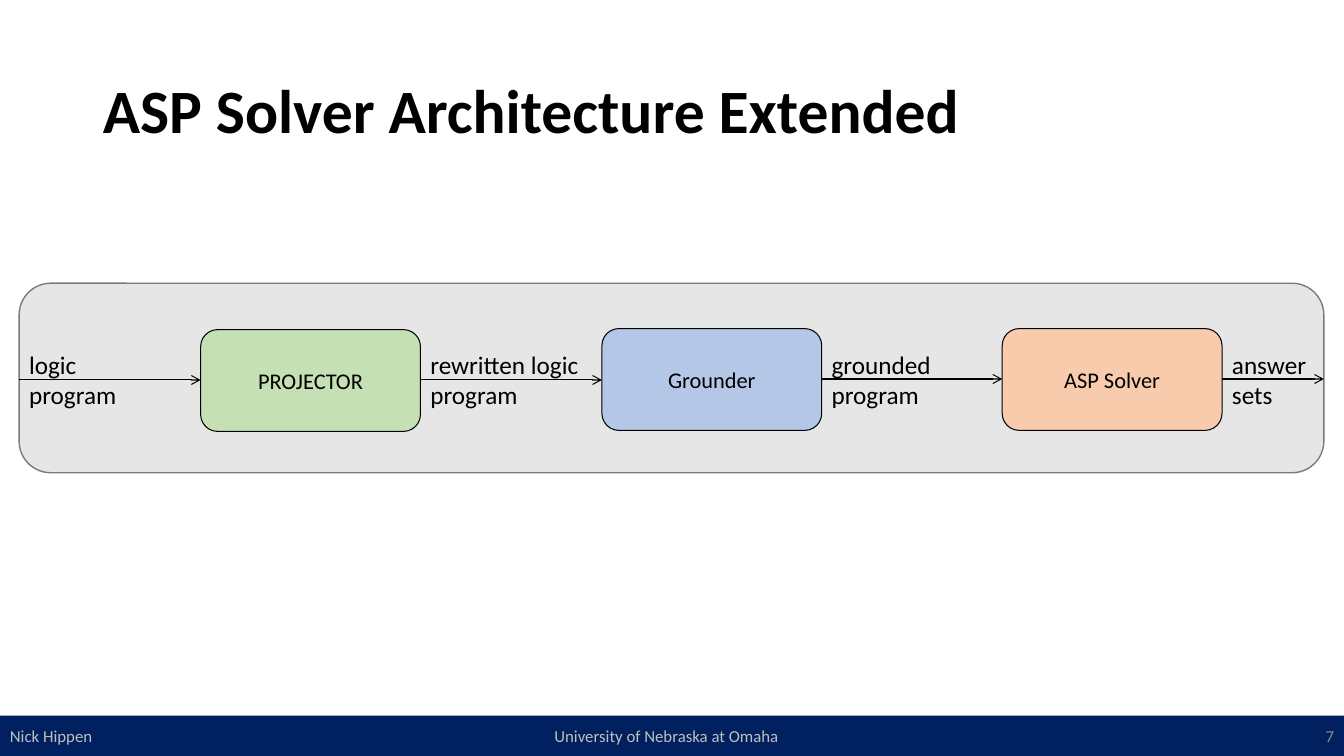
from lxml.etree import SubElement
from pptx import Presentation
from pptx.dml.color import RGBColor
from pptx.enum.shapes import MSO_CONNECTOR, MSO_SHAPE
from pptx.enum.text import MSO_ANCHOR, PP_ALIGN
from pptx.oxml.ns import qn
from pptx.util import Inches, Pt

COLORS = {
    "black": "000000", "panel": "E7E6E6", "edge": "7A7A7A",
    "green": "C5E0B4", "blue": "B4C7E7", "orange": "F8CBAD",
    "navy": "002060", "silver": "BFBFBF", "gray": "8C8C8C",
}


def color(name):
    return RGBColor.from_string(COLORS[name])


class Board:
    """Holds the text style and the current slide."""

    def __init__(self, slide, face="Calibri"):
        self.slide = slide
        self.face = face

    def letter(self, frame, text, size, ink="black", align=PP_ALIGN.LEFT,
               bold=False):
        frame.word_wrap = True
        frame.vertical_anchor = MSO_ANCHOR.MIDDLE
        frame.text = text
        for para in frame.paragraphs:
            para.alignment = align
            font = para.font
            font.name, font.size, font.bold = self.face, Pt(size), bold
            font.color.rgb = color(ink)

    def title(self, text, *area):
        shape = self.slide.shapes.title
        shape.left, shape.top, shape.width, shape.height = map(Inches, area)
        self.letter(shape.text_frame, text, 44, bold=True)
        shape.text_frame.paragraphs[0].line_spacing = 0.9

    def box(self, kind, fill, *area, edge=None, width=0.75):
        shape = self.slide.shapes.add_shape(kind, *map(Inches, area))
        shape.shadow.inherit = False
        shape.fill.solid()
        shape.fill.fore_color.rgb = color(fill)
        if edge:
            shape.line.color.rgb = color(edge)
            shape.line.width = Pt(width)
        else:
            shape.line.fill.background()
        return shape

    def label(self, text, *area, size=18, **style):
        shape = self.slide.shapes.add_textbox(*map(Inches, area))
        self.letter(shape.text_frame, text, size, **style)

    def arrow(self, *ends):
        line = self.slide.shapes.add_connector(
            MSO_CONNECTOR.STRAIGHT, *map(Inches, ends))
        line.line.color.rgb = color("black")
        line.line.width = Pt(0.75)
        props = line._element.spPr
        SubElement(props.find(qn("a:ln")), qn("a:tailEnd"), type="arrow")
        SubElement(props, qn("a:effectLst"))

    def footer(self, left, center, tab, page):
        bar = self.box(MSO_SHAPE.RECTANGLE, "navy", 0, 7.1, 13.33, 0.4)
        self.letter(bar.text_frame, f"{left}\t{center}", 12, "silver")
        # A tab stop places the second part of the footer
        props = bar.text_frame.paragraphs[0]._p.get_or_add_pPr()
        tabs = SubElement(props, qn("a:tabLst"))
        SubElement(tabs, qn("a:tab"), pos=str(Inches(tab)), algn="l")
        props.insert(0, tabs)
        self.label(page, 10.33, 7.1, 3, 0.4, size=12, ink="gray",
                   align=PP_ALIGN.RIGHT)


def main():
    deck = Presentation()
    deck.slide_width, deck.slide_height = Inches(13.33), Inches(7.5)
    board = Board(deck.slides.add_slide(deck.slide_layouts[5]))

    # Title, panel and footer
    board.title("ASP Solver Architecture Extended", 0.92, 0.4, 11.5, 1.45)
    start, end = 0.19, 13.13
    board.box(MSO_SHAPE.ROUNDED_RECTANGLE, "panel",
              start, 2.81, end - start, 1.88, edge="edge", width=1)
    board.footer("Nick Hippen", "University of Nebraska at Omaha", 5.4, "7")

    # Stages of the pipeline: name, fill, left, top
    wide, high = 2.18, 1.01
    stages = [
        ("PROJECTOR", "green", 1.99, 3.27),
        ("Grounder", "blue", 5.97, 3.26),
        ("ASP Solver", "orange", 9.94, 3.26),
    ]
    for name, fill, left, top in stages:
        stage = board.box(MSO_SHAPE.ROUNDED_RECTANGLE, fill,
                          left, top, wide, high, edge="black")
        board.letter(stage.text_frame, name, 16, align=PP_ALIGN.CENTER)

    # Arrows and data passed between the stages
    flows = ["logic\nprogram", "rewritten logic\nprogram",
             "grounded\nprogram", "answer\nsets"]
    tails = [start] + [left + wide for _, _, left, _ in stages]
    heads = [left for _, _, left, _ in stages] + [end]
    levels = [3.77, 3.77, 3.76, 3.76]
    for text, tail, head, level in zip(flows, tails, heads, levels):
        board.arrow(tail, level, head, level)
        board.label(text, tail, 3.41, min(1.8, 13.33 - tail), 0.71)

    deck.save("out.pptx")


if __name__ == "__main__":
    main()
